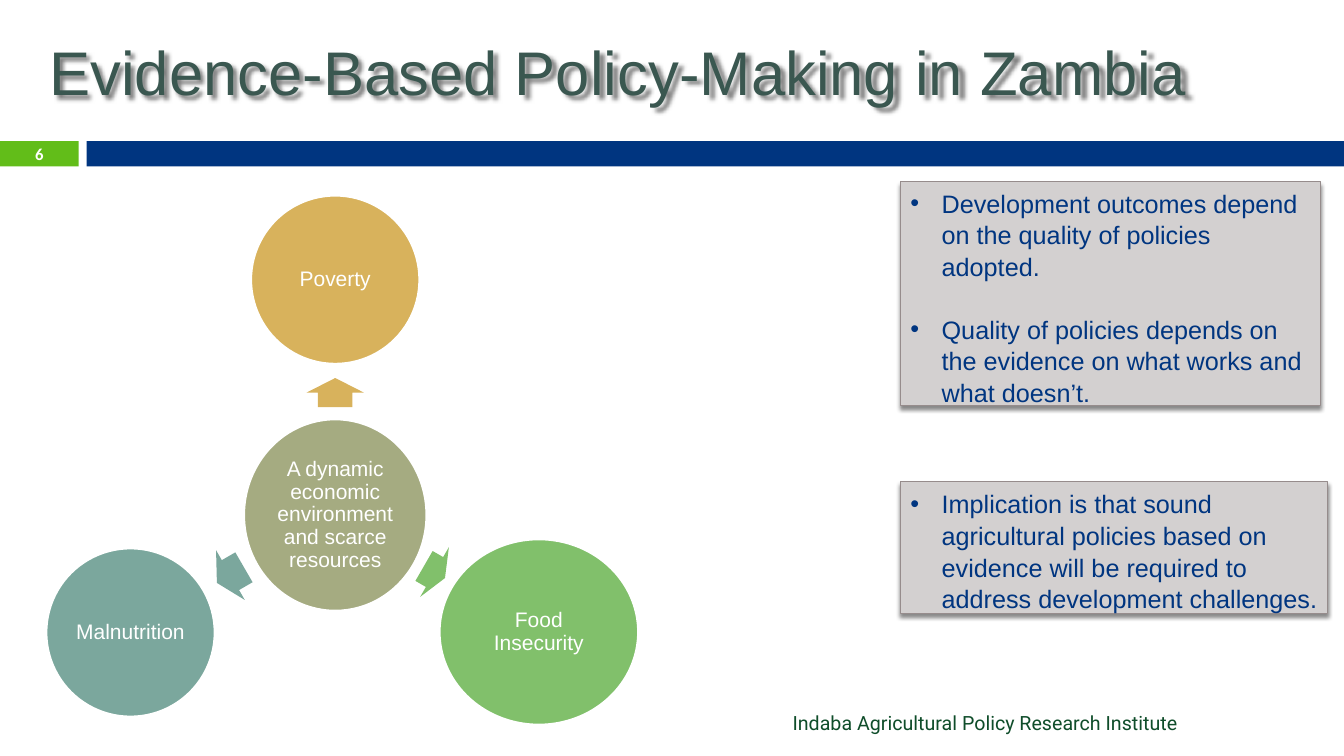
from lxml import etree
from pptx import Presentation
from pptx.dml.color import RGBColor
from pptx.enum.shapes import MSO_SHAPE
from pptx.enum.text import MSO_ANCHOR, MSO_AUTO_SIZE, PP_ALIGN
from pptx.oxml.ns import qn
from pptx.util import Inches, Pt

RECTANGLE, OVAL, RIGHT_ARROW = MSO_SHAPE.RECTANGLE, MSO_SHAPE.OVAL, MSO_SHAPE.RIGHT_ARROW
LEFT, CENTER, RIGHT = PP_ALIGN.LEFT, PP_ALIGN.CENTER, PP_ALIGN.RIGHT
TOP, MIDDLE = MSO_ANCHOR.TOP, MSO_ANCHOR.MIDDLE
NO_AUTOFIT = MSO_AUTO_SIZE.NONE

COLORS = {
    "white": "FFFFFF", "black": "000000", "navy": "003580", "lime": "62BD19",
    "title": "3A5750", "footer": "0F4D2A", "panel": "D3D0D0", "border": "968C8C",
    "olive": "A5AB81", "gold": "D8B25C", "green": "81C06B", "teal": "7BA79D",
}


class PolicySlide:
    """Style and drawing methods for the current slide."""

    def __init__(self, presentation):
        self.slide = presentation.slides.add_slide(presentation.slide_layouts[3])
        self.shapes = self.slide.shapes

    def color(self, name):
        return RGBColor.from_string(COLORS[name])

    def place(self, shape, box):
        shape.left, shape.top, shape.width, shape.height = map(Inches, box)

    def style(self, paragraph, size, color, align=LEFT, font="Arial", bold=False):
        paragraph.alignment = align
        paragraph.font.size = Pt(size)
        paragraph.font.name = font
        paragraph.font.bold = bold
        paragraph.font.color.rgb = self.color(color)

    def shadow(self, shape, blur, distance, angle, opacity):
        effects = etree.SubElement(shape._element.spPr, qn("a:effectLst"))
        outer = etree.SubElement(
            effects, qn("a:outerShdw"), blurRad=str(Pt(blur)), dist=str(Pt(distance)),
            dir=str(angle * 60000), rotWithShape="0")
        tint = etree.SubElement(outer, qn("a:srgbClr"), val=COLORS["black"])
        etree.SubElement(tint, qn("a:alpha"), val=str(opacity * 1000))

    def title(self, text, box):
        heading = self.shapes.title
        self.place(heading, box)
        heading.text_frame.text = text
        heading.text_frame.vertical_anchor = MIDDLE
        heading.text_frame.auto_size = NO_AUTOFIT
        self.style(heading.text_frame.paragraphs[0], 44, "title")
        self.shadow(heading, 3, 3, 45, 50)

    def bullets(self, index, points, box):
        panel = self.slide.placeholders[index]
        self.place(panel, box)
        panel.fill.solid()
        panel.fill.fore_color.rgb = self.color("panel")
        panel.line.color.rgb = self.color("border")
        panel.line.width = Pt(0.79)
        self.shadow(panel, 3, 2.4, 90, 45)
        frame = panel.text_frame
        frame.text = "\n".join(points)
        frame.vertical_anchor = TOP
        frame.auto_size = NO_AUTOFIT
        for position, paragraph in enumerate(frame.paragraphs):
            properties = paragraph._p.get_or_add_pPr()
            properties.set("marL", str(Inches(0.31)))
            properties.set("indent", str(-Inches(0.31)))
            etree.SubElement(properties, qn("a:buChar"), char="•")
            paragraph.line_spacing = 1.05
            paragraph.space_before = Pt(22 if position else 0)
            self.style(paragraph, 18, "navy")

    def block(self, kind, box, fill):
        shape = self.shapes.add_shape(kind, *map(Inches, box))
        shape.shadow.inherit = False
        shape.fill.solid()
        shape.fill.fore_color.rgb = self.color(fill)
        shape.line.fill.background()
        return shape

    def circle(self, text, box, fill):
        circle = self.block(OVAL, box, fill)
        circle.line.color.rgb = self.color("white")
        circle.line.width = Pt(1.5)
        frame = circle.text_frame
        frame.text = text
        frame.word_wrap = True
        frame.vertical_anchor = MIDDLE
        frame.margin_left = frame.margin_right = Inches(0.02)
        frame.margin_top = frame.margin_bottom = Inches(0.02)
        frame.paragraphs[0].line_spacing = 0.9
        self.style(frame.paragraphs[0], 15, "white", CENTER)

    def arrow(self, box, rotation, fill):
        arrow = self.block(RIGHT_ARROW, box, fill)
        arrow.adjustments[0] = 0.6
        arrow.adjustments[1] = 0.5
        arrow.rotation = rotation

    def label(self, text, box, anchor, **text_style):
        frame = self.shapes.add_textbox(*map(Inches, box)).text_frame
        frame.text = text
        frame.word_wrap = True
        frame.vertical_anchor = anchor
        self.style(frame.paragraphs[0], **text_style)


def main():
    presentation = Presentation()
    presentation.slide_width, presentation.slide_height = Inches(13.33), Inches(7.5)
    page = PolicySlide(presentation)

    page.block(RECTANGLE, (0, 1.4, 0.78, 0.25), "lime")
    page.block(RECTANGLE, (0.86, 1.4, 12.47, 0.25), "navy")
    page.title("Evidence-Based Policy-Making in Zambia", (0.39, 0.16, 11.89, 1.08))
    page.label("6", (0, 1.39, 0.78, 0.27), MIDDLE, size=11.9, color="white",
               align=CENTER, font="Calibri", bold=True)
    page.label("Indaba Agricultural Policy Research Institute", (6.11, 7, 5.67, 0.34), TOP,
               size=14, color="footer", align=RIGHT, font="Roboto")

    page.circle("A dynamic economic environment and scarce resources",
                (2.42, 4.16, 1.81, 1.9), "olive")
    challenges = [
        ("Poverty", (2.49, 1.94, 1.67, 1.67), (3.18, 3.61, 0.29, 0.57), 270, "gold"),
        ("Food Insecurity", (4.36, 5.35, 1.97, 1.84), (4.19, 5.39, 0.24, 0.57), 30, "green"),
        ("Malnutrition", (0.46, 5.44, 1.67, 1.67), (2.13, 5.42, 0.31, 0.57), 150, "teal"),
    ]
    for challenge, circle_box, arrow_box, rotation, fill in challenges:
        page.arrow(arrow_box, rotation, fill)
        page.circle(challenge, circle_box, fill)

    page.bullets(1, [
        "Development outcomes depend on the quality of policies adopted.",
        "Quality of policies depends on the evidence on what works and what doesn’t.",
    ], (8.93, 1.8, 4.17, 2.22))
    page.bullets(2, [
        "Implication is that sound agricultural policies based on evidence "
        "will be required to address development challenges.",
    ], (8.93, 4.78, 4.24, 1.31))

    presentation.save("out.pptx")


if __name__ == "__main__":
    main()
